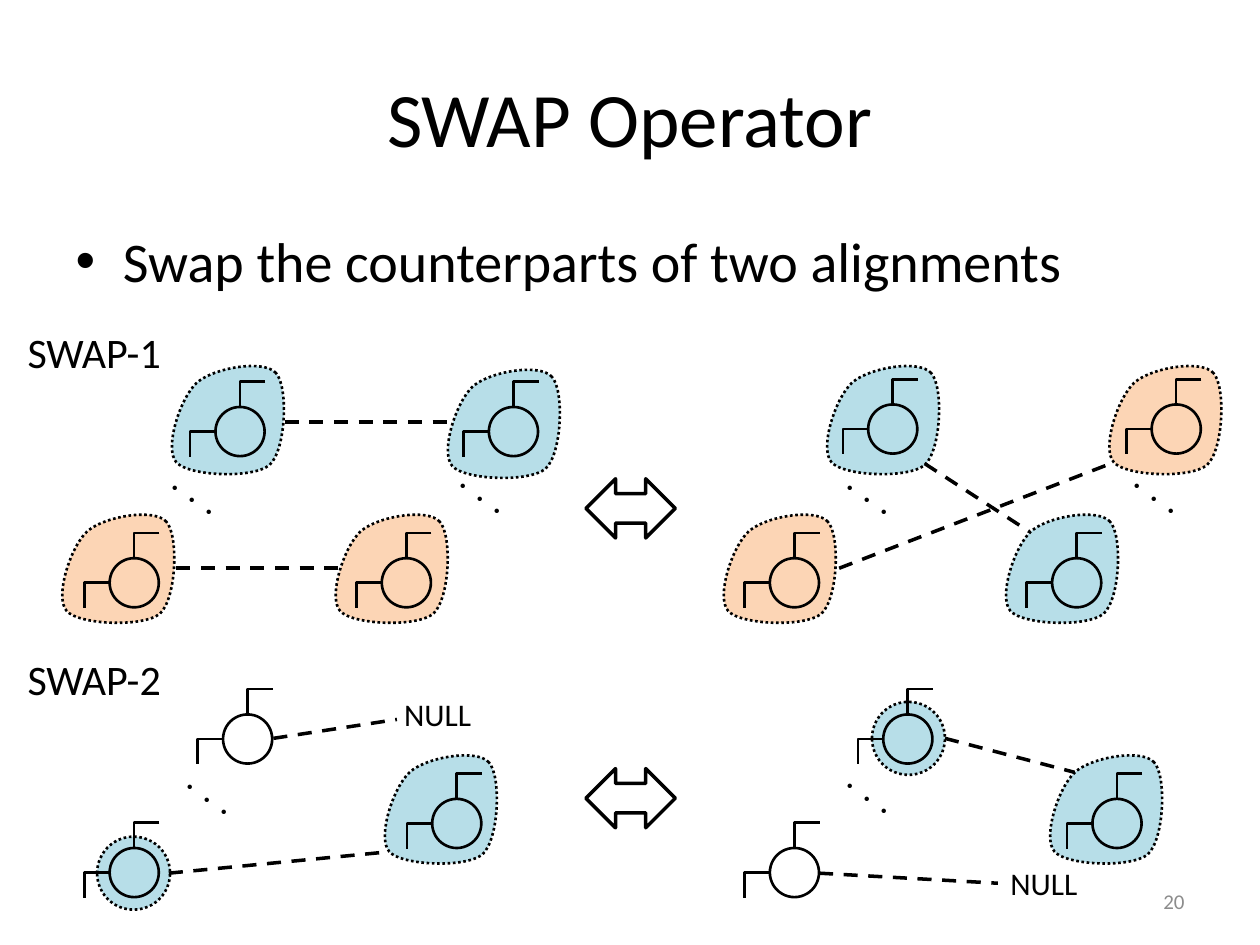
from lxml.etree import SubElement
from pptx import Presentation
from pptx.dml.color import RGBColor
from pptx.enum.dml import MSO_LINE as Dash
from pptx.enum.shapes import MSO_CONNECTOR as Link, MSO_SHAPE as Kind
from pptx.enum.text import MSO_ANCHOR as Anchor, MSO_AUTO_SIZE as Fit, PP_ALIGN as Align
from pptx.oxml.ns import qn
from pptx.util import Inches, Pt

COLORS = {"ink": "000000", "blue": "B7DEE8", "peach": "FCD5B5", "gray": "8C8C8C"}
COLS, ROWS = 100, 75
NODE, ARM = 3.9, 2

# Start point, then three points for each Bezier curve
OUTLINE = [(8.9, 1.1),
           (7.9, 0), (3.9, 0.7), (2.6, 1.9),
           (1.3, 3.1), (0, 7.1), (1, 8.2),
           (2, 9.3), (7.1, 9.5), (8.4, 8.4),
           (9.7, 7.2), (9.9, 2.2), (8.9, 1.1)]

TREES = {
    "blue": [(13, 28.5), (34.9, 28.8), (65, 28.5), (79.2, 40.3), (29.9, 59.4), (82.7, 59.4)],
    "peach": [(4.3, 40.3), (26, 40.3), (87.4, 28.5), (56.8, 40.3)],
}
RINGS = [(69.2, 55.7), (7.7, 66.4)]
NODES = [(17.1, 32.3), (38.8, 32.3), (68.9, 32.1), (91.4, 32.1),
         (8.7, 44.3), (30.3, 44.3), (61.1, 44.3), (83.5, 44.3),
         (17.7, 56.7), (8.7, 67.3), (34.3, 63.4),
         (70.1, 56.7), (61.1, 67.3), (86.7, 63.4)]
DASHES = [((22.6, 33.5), (35.8, 33.5)), ((14, 45.1), (27.2, 45.1)),
          ((73.4, 36.8), (81.7, 42.2)), ((66.6, 45.1), (88.4, 36.7)),
          ((21.7, 58.6), (31.5, 57.1)), ((13.4, 69.3), (30.9, 67.6)),
          ((75, 58.6), (85.3, 61.3)), ((65, 69.3), (79.2, 70.1))]
DOTS = [(10.9, 37.7), (33.8, 37.6), (64.5, 37.7), (87.3, 37.6), (12.1, 61.5), (64.5, 61.4)]


class Board:
    def __init__(self, deck, slide):
        self.slide, self.shapes = slide, slide.shapes
        self.col, self.row = deck.slide_width / COLS, deck.slide_height / ROWS
        self.font = "Calibri"

    def place(self, x, y):
        return round(x * self.col), round(y * self.row)

    def color(self, name):
        return RGBColor.from_string(COLORS[name])

    def stroke(self, line, width, dash=None):
        line.color.rgb, line.width = self.color("ink"), Pt(width)
        if dash:
            line.dash_style = dash

    def paint(self, shape, fill, width, dash=None):
        shape.shadow.inherit = False
        if fill:
            shape.fill.solid()
            shape.fill.fore_color.rgb = self.color(fill)
        else:
            shape.fill.background()
        self.stroke(shape.line, width, dash)

    def shape(self, kind, x, y, w, h, fill=None, width=1.5, dash=None):
        item = self.shapes.add_shape(kind, *self.place(x, y), *self.place(w, h))
        self.paint(item, fill, width, dash)

    def tree(self, x, y, fill):
        """Draw the closed outline and turn its segments into curves."""
        spots = [self.place(x + dx, y + dy) for dx, dy in OUTLINE]
        pen = self.shapes.build_freeform(*spots[0])
        pen.add_line_segments(spots[1:], close=True)
        item = pen.convert_to_shape()
        trace = next(item.element.iter(qn("a:path")))
        steps = trace.findall(qn("a:lnTo"))
        for i in range(0, len(OUTLINE) - 1, 3):
            curve = SubElement(trace, qn("a:cubicBezTo"))
            for step in steps[i:i + 3]:
                curve.append(step[0])
        for step in steps:
            trace.remove(step)
        trace.append(trace.find(qn("a:close")))
        self.paint(item, fill, 1.5, Dash.ROUND_DOT)

    def link(self, start, end, kind=Link.STRAIGHT, width=2, dash=None):
        item = self.shapes.add_connector(kind, *self.place(*start), *self.place(*end))
        self.stroke(item.line, width, dash)
        SubElement(item.element.spPr, qn("a:effectLst"))
        return item

    def elbow(self, x, y):
        """Run from the top right corner to the left, then down."""
        item = self.link((x + ARM, y), (x, y + ARM), Link.ELBOW, 1.5)
        item.element.spPr.find(qn("a:prstGeom")).set("prst", "bentConnector2")

    def node(self, x, y):
        self.shape(Kind.OVAL, x, y, NODE, NODE)
        self.elbow(x + NODE / 2, y - ARM)
        self.elbow(x - ARM, y + NODE / 2)

    def style(self, frame, size, color="ink", align=None):
        for para in frame.paragraphs:
            para.alignment = align
            for run in para.runs:
                run.font.name, run.font.size = self.font, Pt(size)
                run.font.color.rgb = self.color(color)

    def holder(self, item, box, text, size, align=None):
        item.left, item.top = self.place(*box[:2])
        item.width, item.height = self.place(*box[2:])
        item.text_frame.text = text
        self.style(item.text_frame, size, align=align)

    def label(self, x, y, w, h, text, size, color="ink", align=None):
        item = self.shapes.add_textbox(*self.place(x, y), *self.place(w, h))
        frame = item.text_frame
        frame.text, frame.word_wrap = text, False
        frame.auto_size = Fit.SHAPE_TO_FIT_TEXT
        self.style(frame, size, color, align)
        return item

    def dots(self, x, y):
        item = self.label(x, y, 4.5, 3, "・・・", 12)
        item.rotation = 306.2
        item.element.txBody.find(qn("a:bodyPr")).set("vert", "eaVert")

    def number(self, text):
        frame = self.label(71.7, 69.5, 23.3, 4, text, 12, "gray", Align.RIGHT).text_frame
        frame.word_wrap, frame.auto_size = True, Fit.NONE
        frame.vertical_anchor = Anchor.MIDDLE


def main():
    deck = Presentation()
    deck.slide_width, deck.slide_height = Inches(10), Inches(7.5)
    board = Board(deck, deck.slides.add_slide(deck.slide_layouts[1]))
    title, body = board.slide.placeholders
    board.holder(title, (5, 3, 90, 12.5), "SWAP Operator", 44, Align.CENTER)
    board.holder(body, (5, 17.5, 90, 49.5), "Swap the counterparts of two alignments", 32)

    for fill, spots in TREES.items():
        for spot in spots:
            board.tree(*spot, fill)
    for spot in RINGS:
        board.shape(Kind.OVAL, *spot, 5.8, 5.8, "blue", dash=Dash.ROUND_DOT)
    for spot in NODES:
        board.node(*spot)
    for start, end in DASHES:
        board.link(start, end, dash=Dash.DASH)
    for spot in DOTS:
        board.dots(*spot)
    for y in (38, 61):
        board.shape(Kind.LEFT_RIGHT_ARROW, 46.5, y, 7.1, 4.7, width=2)
    for i, y in enumerate((25.4, 51.4), 1):
        board.label(1.2, y, 12.8, 5, f"SWAP-{i}", 24)
    for spot in ((31.1, 54.7), (79.2, 68.1)):
        board.label(*spot, 7.4, 4, "NULL", 18)
    board.number("20")
    deck.save("out.pptx")


if __name__ == "__main__":
    main()
